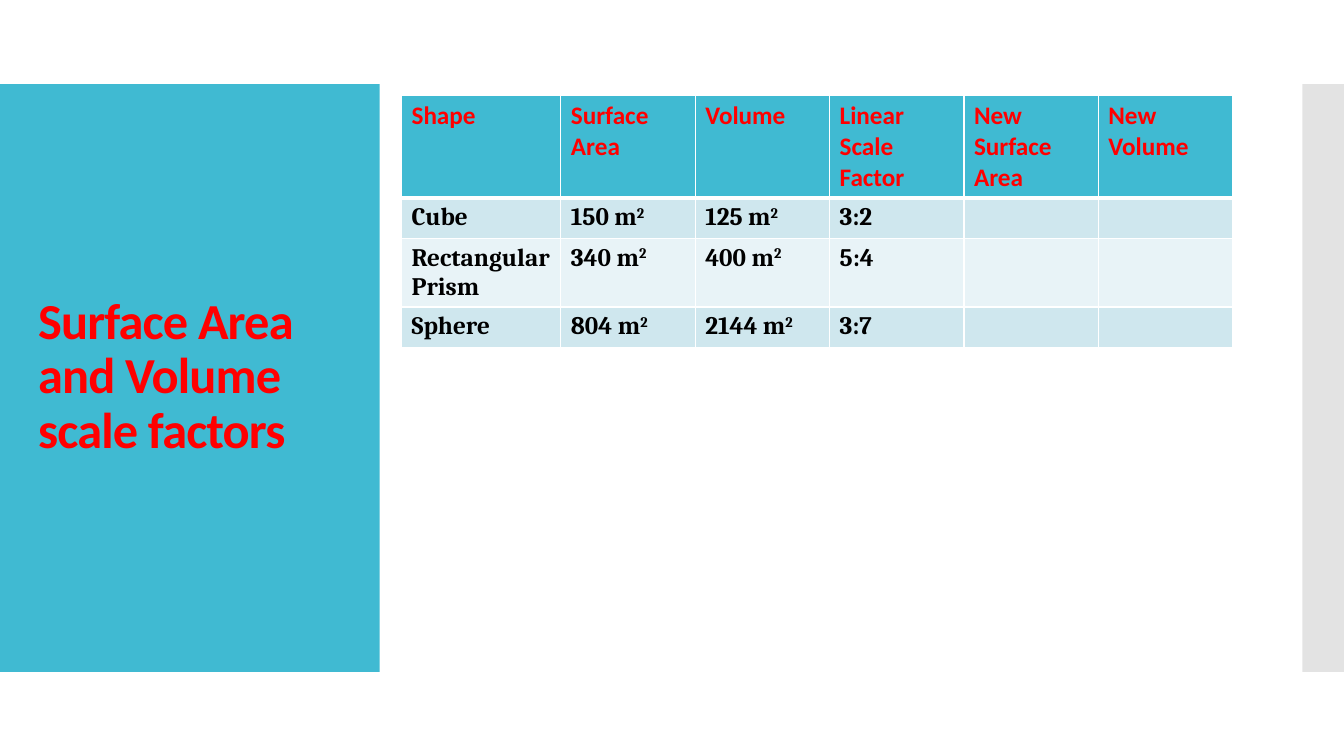
import pptx
import pptx.util
import pptx.dml.color
import pptx.enum.shapes
import pptx.enum.text
import pptx.oxml
import pptx.oxml.ns
from lxml import etree

Pt = pptx.util.Pt

COLORS = {
    "teal": "40BAD2",
    "edge": "C8C8C8",
    "red": "FF0000",
    "black": "000000",
    "white": "FFFFFF",
    "band_dark": "CFE7EE",
    "band_light": "E8F3F7",
}

# A caret marks the start of a superscript
MEASUREMENTS = [
    ["Shape", "Surface Area", "Volume", "Linear Scale Factor",
     "New Surface Area", "New Volume"],
    ["Cube", "150 m^2", "125 m^2", "3:2", "", ""],
    ["Rectangular Prism", "340 m^2", "400 m^2", "5:4", "", ""],
    ["Sphere", "804 m^2", "2144 m^2", "3:7", "", ""],
]
COLUMN_WIDTHS = [113.8] + [96] * 5
ROW_HEIGHTS = [72.4, 29.2, 48.6, 29.2]


def rgb(name):
    return pptx.dml.color.RGBColor.from_string(COLORS[name])


def format_run(run, size, font_name, color):
    run.font.size = Pt(size)
    run.font.name = font_name
    run.font.bold = True
    run.font.color.rgb = rgb(color)


def add_panel(slide, left, width, color, opacity=100):
    """Add a full-height side panel behind the title."""
    panel = slide.shapes.add_shape(
        pptx.enum.shapes.MSO_SHAPE.RECTANGLE,
        Pt(left), Pt(60), Pt(width), Pt(420))
    panel.shadow.inherit = False
    panel.line.fill.background()
    panel.fill.solid()
    panel.fill.fore_color.rgb = rgb(color)
    if opacity < 100:
        shade = panel.element.find(".//" + pptx.oxml.ns.qn("a:srgbClr"))
        alpha = etree.SubElement(shade, pptx.oxml.ns.qn("a:alpha"))
        alpha.set("val", str(opacity * 1000))
    slide.shapes.title.element.addprevious(panel.element)


def set_title(slide, text):
    title = slide.shapes.title
    title.left, title.top = Pt(20), Pt(88.5)
    title.width, title.height = Pt(232), Pt(362)
    frame = title.text_frame
    frame.text = text
    frame.word_wrap = True
    frame.auto_size = pptx.enum.text.MSO_AUTO_SIZE.NONE
    frame.vertical_anchor = pptx.enum.text.MSO_ANCHOR.MIDDLE
    heading = frame.paragraphs[0]
    heading.alignment = pptx.enum.text.PP_ALIGN.LEFT
    heading.line_spacing = 0.9
    format_run(heading.runs[0], 36, "Calibri", "red")
    heading.runs[0].font._element.set("spc", "-60")


def set_borders(cell, top, bottom):
    """Give a cell white borders; they come before the fill in the XML."""
    properties = cell._tc.get_or_add_tcPr()
    widths = {"lnL": 1, "lnR": 1, "lnT": top, "lnB": bottom}
    for position, (side, width) in enumerate(widths.items()):
        border = pptx.oxml.parse_xml(
            f'<a:{side} {pptx.oxml.ns.nsdecls("a")} w="{Pt(width)}">'
            f'<a:solidFill><a:srgbClr val="{COLORS["white"]}"/></a:solidFill>'
            f'</a:{side}>')
        properties.insert(position, border)


def fill_cell(cell, text, row):
    if row == 0:
        background, font_name, color = "teal", "Calibri", "red"
    else:
        background = "band_dark" if row % 2 else "band_light"
        font_name, color = "Cambria", "black"
    cell.fill.solid()
    cell.fill.fore_color.rgb = rgb(background)
    set_borders(cell, top=3 if row == 1 else 1, bottom=3 if row == 0 else 1)

    base, _, exponent = text.partition("^")
    paragraph = cell.text_frame.paragraphs[0]
    for part in filter(None, (base, exponent)):
        run = paragraph.add_run()
        run.text = part
        format_run(run, 18, font_name, color)
        if part == exponent:
            run.font._element.set("baseline", "30000")


def add_measurement_table(slide):
    table = slide.shapes.add_table(
        len(ROW_HEIGHTS), len(COLUMN_WIDTHS), Pt(286.8), Pt(68.2),
        Pt(sum(COLUMN_WIDTHS)), Pt(sum(ROW_HEIGHTS))).table
    for column, width in zip(table.columns, COLUMN_WIDTHS):
        column.width = Pt(width)
    for row, height in enumerate(ROW_HEIGHTS):
        table.rows[row].height = Pt(height)
        for column, text in enumerate(MEASUREMENTS[row]):
            fill_cell(table.cell(row, column), text, row)


def main():
    deck = pptx.Presentation()
    deck.slide_width, deck.slide_height = Pt(960), Pt(540)
    slide = deck.slides.add_slide(deck.slide_layouts[5])

    # Side panels and title
    add_panel(slide, 0, 271.2, "teal")
    add_panel(slide, 930.3, 29.7, "edge", opacity=50)
    set_title(slide, "Surface Area and Volume scale factors")

    # Scale factor exercise
    add_measurement_table(slide)

    deck.save("out.pptx")


if __name__ == "__main__":
    main()
